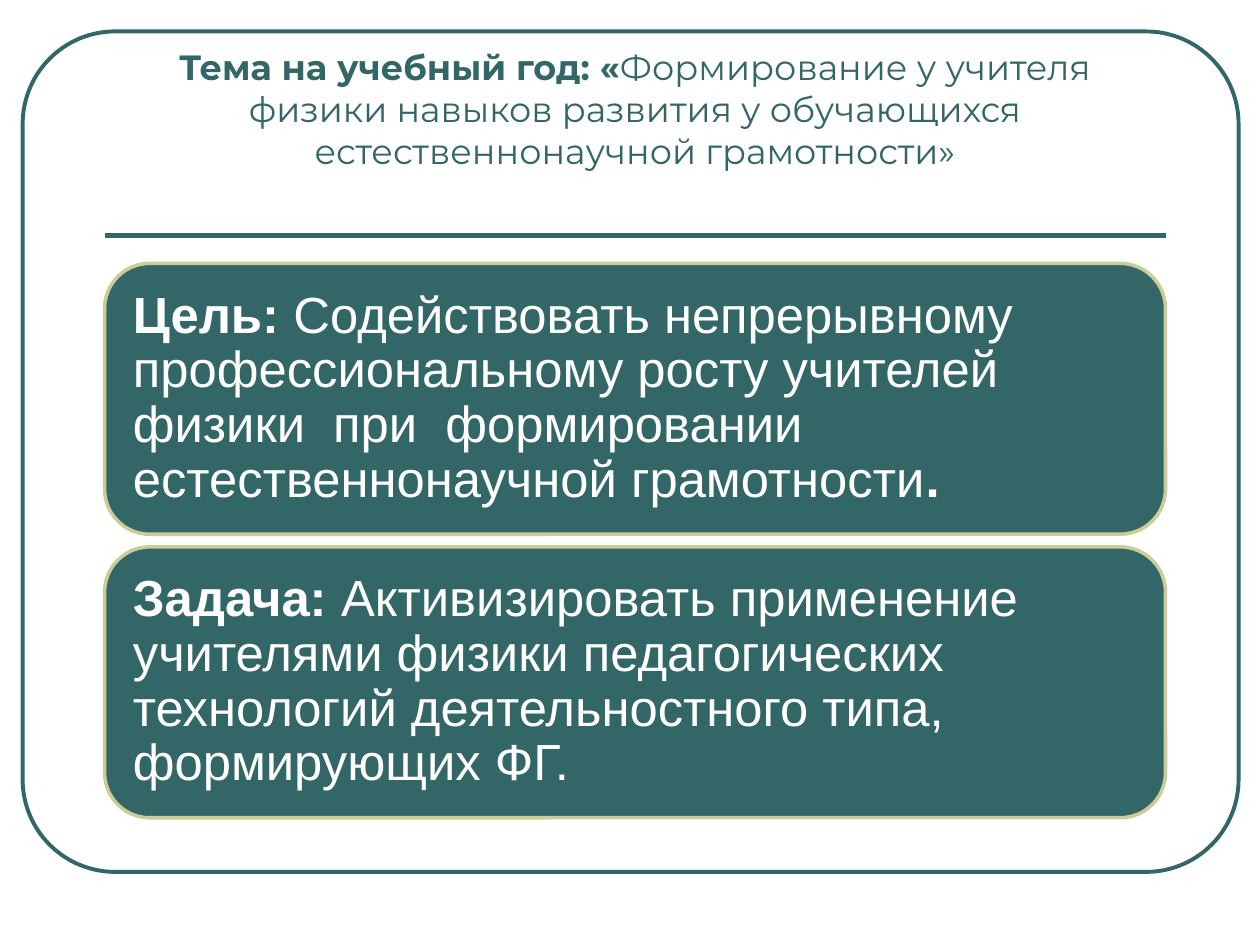
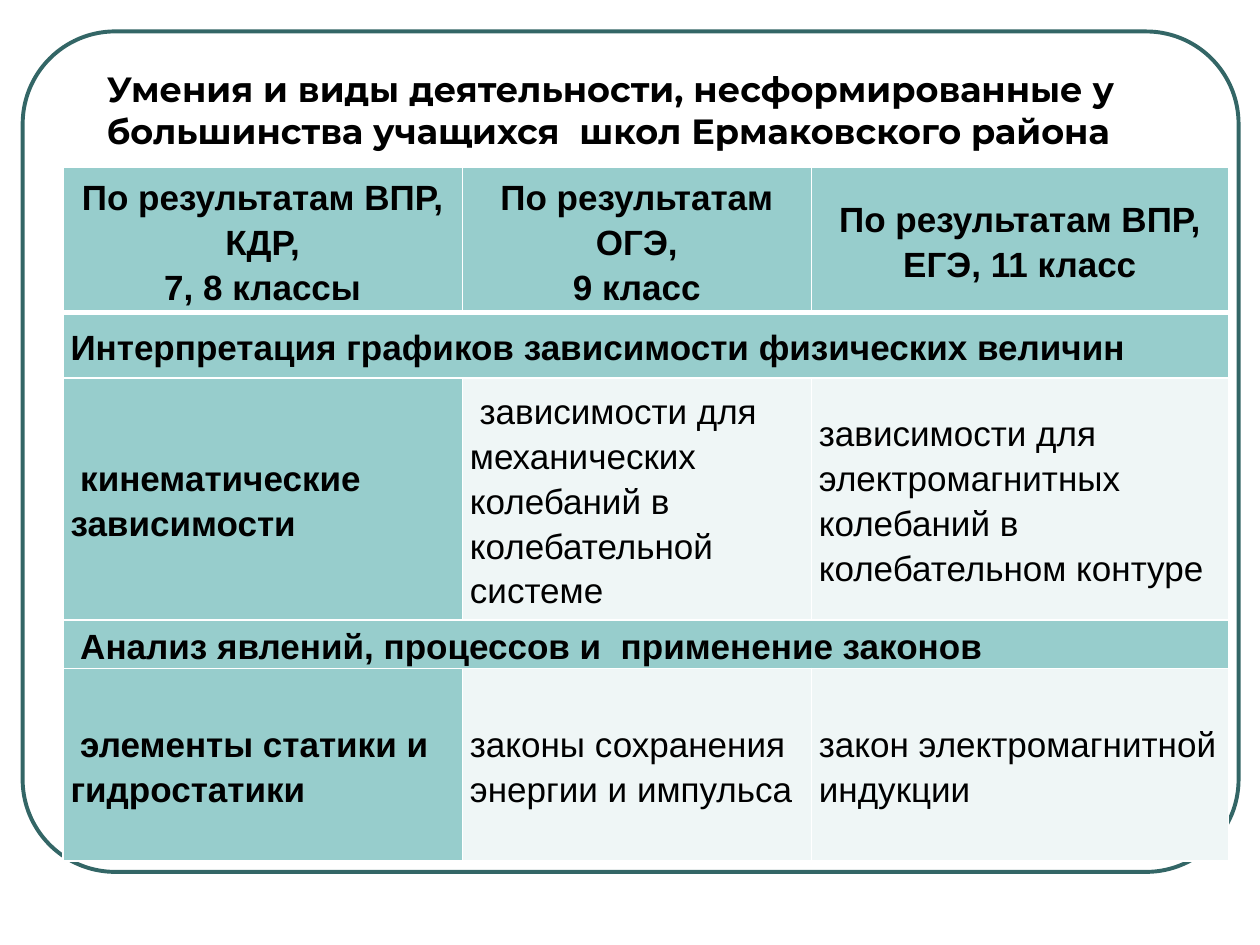
import dataclasses

import lxml.etree
import pptx
import pptx.dml.color
import pptx.enum.shapes
import pptx.enum.text
import pptx.oxml.ns
import pptx.util

Inches = pptx.util.Inches
Pt = pptx.util.Pt
ALIGN = pptx.enum.text.PP_ALIGN
ANCHOR = pptx.enum.text.MSO_ANCHOR
SHAPE = pptx.enum.shapes.MSO_SHAPE
qn = pptx.oxml.ns.qn


@dataclasses.dataclass(frozen=True)
class Theme:
    teal: str = "336666"
    sand: str = "CCCC99"
    aqua: str = "97CDCC"
    pale: str = "EFF6F6"
    white: str = "FFFFFF"
    black: str = "000000"
    heading_font: str = "Montserrat"
    body_font: str = "Arial"
    heading_size: int = 20
    table_size: int = 20
    card_size: int = 29


THEME = Theme()
LEFT, WIDTH = 0.83, 8.42  # content column shared by title, rule and cards


def rgb(color):
    return pptx.dml.color.RGBColor.from_string(color)


def add_run(paragraph, text, font, size, color, bold):
    run = paragraph.add_run()
    run.text = text
    run.font.name = font
    run.font.size = Pt(size)
    run.font.color.rgb = rgb(color)
    run.font.bold = bold


def set_margins(frame, margin):
    frame.margin_left = frame.margin_right = Inches(margin)
    frame.margin_top = frame.margin_bottom = Inches(margin)


def add_round_box(slide, box, line_color, line_width, fill=None):
    shape = slide.shapes.add_shape(SHAPE.ROUNDED_RECTANGLE, *map(Inches, box))
    shape.shadow.inherit = False
    shape.line.color.rgb = rgb(line_color)
    shape.line.width = Pt(line_width)
    if fill:
        shape.fill.solid()
        shape.fill.fore_color.rgb = rgb(fill)
    else:
        shape.fill.background()
    return shape


# Parts common to the slides
def add_frame(slide):
    frame = add_round_box(slide, (0.18, 0.25, 9.65, 6.67), THEME.teal, 2.25)
    frame.adjustments[0] = 0.11


def add_title(slide, box, pieces, color, align):
    title = slide.shapes.add_textbox(*map(Inches, box)).text_frame
    title.word_wrap = True
    title.vertical_anchor = ANCHOR.BOTTOM
    paragraph = title.paragraphs[0]
    paragraph.alignment = align
    for text, bold in pieces:
        add_run(paragraph, text, THEME.heading_font, THEME.heading_size, color, bold)


def add_rule(slide, left, top, width):
    rule = slide.shapes.add_connector(
        pptx.enum.shapes.MSO_CONNECTOR.STRAIGHT,
        Inches(left), Inches(top), Inches(left + width), Inches(top))
    rule.line.color.rgb = rgb(THEME.teal)
    rule.line.width = Pt(3)
    lxml.etree.SubElement(rule._element.spPr, qn("a:effectLst"))


# Goal and task cards
def add_cards(slide, box, cards, gap):
    left, top, width, height = box
    card_height = (height - gap * (len(cards) - 1)) / len(cards)
    for index, pieces in enumerate(cards):
        card_top = top + index * (card_height + gap)
        card = add_round_box(slide, (left, card_top, width, card_height),
                             THEME.sand, 2, THEME.teal)
        frame = card.text_frame
        frame.word_wrap = True
        frame.vertical_anchor = ANCHOR.MIDDLE
        set_margins(frame, 0.12)
        paragraph = frame.paragraphs[0]
        paragraph.alignment = ALIGN.LEFT
        paragraph.line_spacing = 0.9
        for text, bold in pieces:
            add_run(paragraph, text, THEME.body_font, THEME.card_size,
                    THEME.white, bold)


# Skills table
def style_cell(cell, fill, bottom_width):
    properties = cell._tc.get_or_add_tcPr()
    for side, width in (("L", 1), ("R", 1), ("T", 1), ("B", bottom_width)):
        border = lxml.etree.SubElement(properties, qn(f"a:ln{side}"), w=str(Pt(width)))
        solid = lxml.etree.SubElement(border, qn("a:solidFill"))
        lxml.etree.SubElement(solid, qn("a:srgbClr"), val=THEME.white)
    cell.fill.solid()
    cell.fill.fore_color.rgb = rgb(fill)
    cell.vertical_anchor = ANCHOR.MIDDLE
    cell.margin_left = cell.margin_right = Inches(0.06)
    cell.margin_top = cell.margin_bottom = 0


def add_skills_table(slide, left, top, column_widths, row_heights, rows):
    table = slide.shapes.add_table(
        len(row_heights), len(column_widths), Inches(left), Inches(top),
        Inches(sum(column_widths)), Inches(sum(row_heights))).table
    table.first_row = table.horz_banding = False
    for column, width in zip(table.columns, column_widths):
        column.width = Inches(width)
    last_column = len(column_widths) - 1
    for r, (height, texts) in enumerate(zip(row_heights, rows)):
        table.rows[r].height = Inches(height)
        is_header, is_section = r == 0, len(texts) == 1
        for c in range(last_column + 1):
            strong = is_header or is_section or c == 0
            style_cell(table.cell(r, c), THEME.aqua if strong else THEME.pale,
                       3 if is_header else 1)
        if is_section:
            table.cell(r, 0).merge(table.cell(r, last_column))
        for c, text in enumerate(texts):
            frame = table.cell(r, c).text_frame
            for i, line in enumerate(text.split("\n")):
                paragraph = frame.add_paragraph() if i else frame.paragraphs[0]
                paragraph.alignment = ALIGN.CENTER if is_header else ALIGN.LEFT
                paragraph.line_spacing = 1.15
                add_run(paragraph, line, THEME.body_font, THEME.table_size,
                        THEME.black, is_header or c == 0)


def build_goal_slide(slide):
    add_frame(slide)
    add_rule(slide, LEFT, 1.87, WIDTH)
    add_title(slide, (LEFT, 0.58, WIDTH, 0.83), [
        ("Тема на учебный год: «", True),
        ("Формирование у учителя физики навыков развития у обучающихся "
         "естественнонаучной грамотности»", False),
    ], THEME.teal, ALIGN.CENTER)
    add_cards(slide, (LEFT, 2.09, WIDTH, 4.4), [
        [("Цель: ", True),
         ("Содействовать непрерывному профессиональному росту учителей "
          "физики  при  формировании естественнонаучной грамотности", False),
         (".", True)],
        [("Задача: ", True),
         ("Активизировать применение учителями физики педагогических "
          "технологий деятельностного типа, формирующих ФГ.", False)],
    ], gap=0.1)


def build_skills_slide(slide):
    add_frame(slide)
    add_title(slide, (0.75, 0.42, 8.67, 0.83), [
        ("Умения и виды деятельности, несформированные у большинства "
         "учащихся  школ Ермаковского района", True),
    ], THEME.black, ALIGN.LEFT)
    add_skills_table(slide, 0.5, 1.33, (3.17, 2.77, 3.31),
                     (1.15, 0.52, 1.92, 0.38, 1.53), [
        ("По результатам ВПР, КДР,\n7, 8 классы",
         "По результатам ОГЭ,\n9 класс",
         "По результатам ВПР, ЕГЭ, 11 класс"),
        ("Интерпретация графиков зависимости физических величин",),
        (" кинематические зависимости",
         " зависимости для механических колебаний в колебательной системе",
         "зависимости для электромагнитных колебаний в\nколебательном контуре"),
        (" Анализ явлений, процессов и  применение законов",),
        (" элементы статики и гидростатики",
         "законы сохранения энергии и импульса",
         "закон электромагнитной индукции"),
    ])


def main():
    deck = pptx.Presentation()
    deck.slide_width, deck.slide_height = Inches(10), Inches(7.5)
    for build in (build_goal_slide, build_skills_slide):
        build(deck.slides.add_slide(deck.slide_layouts[6]))
    deck.save("out.pptx")


if __name__ == "__main__":
    main()
